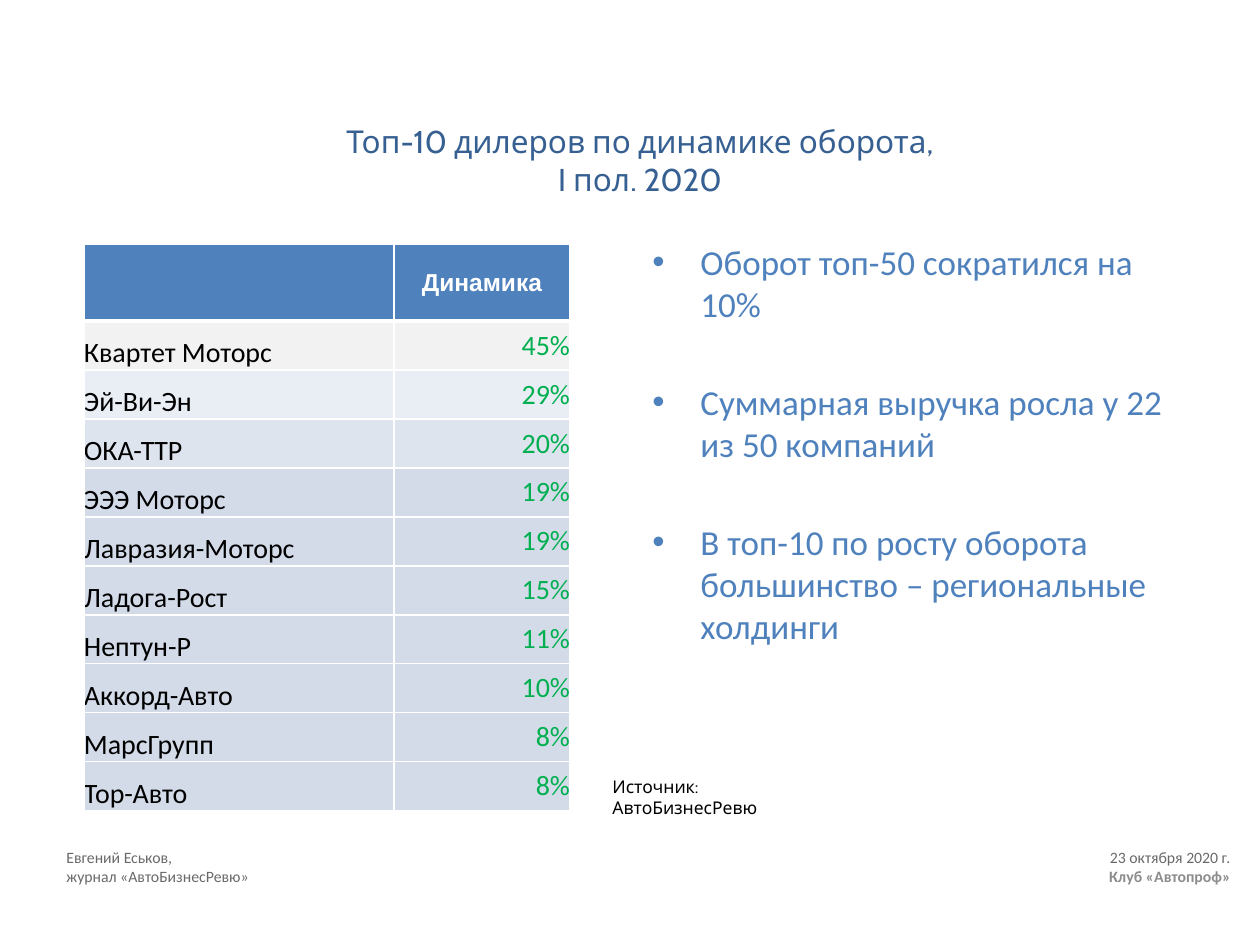
import pptx
import pptx.util
import pptx.dml.color
import pptx.enum.text
from pptx.oxml.ns import qn
from lxml import etree

ALIGN = pptx.enum.text.PP_ALIGN
ANCHOR = pptx.enum.text.MSO_ANCHOR

TITLE = ["Топ-10 дилеров по динамике оборота,", "I пол. 2020"]
HEADER = ["", "Динамика"]
DEALERS = [
    ("Квартет Моторс", "45%"),
    ("Эй-Ви-Эн", "29%"),
    ("ОКА-ТТР", "20%"),
    ("ЭЭЭ Моторс", "19%"),
    ("Лавразия-Моторс", "19%"),
    ("Ладога-Рост", "15%"),
    ("Нептун-Р", "11%"),
    ("Аккорд-Авто", "10%"),
    ("МарсГрупп", "8%"),
    ("Тор-Авто", "8%"),
]
BULLETS = [
    "Оборот топ-50 сократился на 10%",
    "Суммарная выручка росла у 22 из 50 компаний",
    "В топ-10 по росту оборота большинство – региональные холдинги",
]
SOURCE = ["Источник:", "АвтоБизнесРевю"]
FOOTER = [
    ("Евгений Еськов,", "23 октября 2020 г."),
    ("журнал «АвтоБизнесРевю»", "Клуб «Автопроф»"),
]

THEME = {
    "display": "Cabin", "body": "Calibri", "header": "Arial",
    "title": "376092", "accent": "4F81BD", "growth": "00B050",
    "text": "000000", "white": "FFFFFF", "footer": "696969", "club": "8C8C8C",
    "rows": ["F2F2F2", "E9EDF4", "DEE4EE", "D3DBE9"],  # last one repeats
    "title_pt": 18, "bullet_pt": 20, "cell_pt": 16, "header_pt": 14,
    "source_pt": 10, "footer_pt": 9,
}

TITLE_BOX = (94, 116, 1092, 90)
TABLE_AT = (84, 244)
COLUMNS = [310, 176]
HEADER_H, ROW_H = 77, 49
BULLET_BOX = (640, 234, 546, 546)
BULLET_INDENT = 48
SOURCE_BOX = (600, 770, 248, 54)
FOOTER_BOX = (54, 848, 1191, 50)
FOOTER_TAB = 1164


def px(n):
    return pptx.util.Emu(n * 914400 // 126)


def rgb(color):
    return pptx.dml.color.RGBColor.from_string(color)


def add_text(p, text, font="body", size=16, color="text", bold=False, align=None):
    r = p.add_run()
    r.text = text
    r.font.name = THEME[font]
    r.font.size = pptx.util.Pt(size)
    r.font.color.rgb = rgb(THEME[color])
    r.font.bold = bold
    if align is not None:
        p.alignment = align


def paragraphs(tf, count):
    """Yield the first paragraph of the frame, then new ones up to count."""
    yield tf.paragraphs[0]
    for _ in range(count - 1):
        yield tf.add_paragraph()


def add_box(slide, box, wrap=True):
    tf = slide.shapes.add_textbox(*map(px, box)).text_frame
    tf.word_wrap = wrap
    return tf


def add_title(slide):
    sp = slide.shapes.title
    sp.left, sp.top, sp.width, sp.height = map(px, TITLE_BOX)
    tf = sp.text_frame
    tf.auto_size = pptx.enum.text.MSO_AUTO_SIZE.NONE
    tf.vertical_anchor = ANCHOR.TOP
    for p, line in zip(paragraphs(tf, len(TITLE)), TITLE):
        add_text(p, line, font="display", size=THEME["title_pt"], color="title",
                 align=ALIGN.CENTER)


def style_cell(cell, fill, top=1, bottom=1):
    """Draw white borders with widths in points, then fill the cell."""
    tc_pr = cell._tc.get_or_add_tcPr()
    for tag, width in (("lnL", 1), ("lnR", 1), ("lnT", top), ("lnB", bottom)):
        ln = etree.SubElement(tc_pr, qn(f"a:{tag}"), w=str(pptx.util.Pt(width)))
        solid = etree.SubElement(ln, qn("a:solidFill"))
        etree.SubElement(solid, qn("a:srgbClr"), val=THEME["white"])
    cell.fill.solid()
    cell.fill.fore_color.rgb = rgb(fill)


def add_dealer_table(slide):
    height = HEADER_H + ROW_H * len(DEALERS)
    size = (sum(COLUMNS), height)
    table = slide.shapes.add_table(len(DEALERS) + 1, len(COLUMNS),
                                   *map(px, TABLE_AT + size)).table
    for col, width in zip(table.columns, COLUMNS):
        col.width = px(width)
    for i, row in enumerate(table.rows):
        row.height = px(ROW_H if i else HEADER_H)

    for cell, label in zip(table.rows[0].cells, HEADER):
        style_cell(cell, THEME["accent"], bottom=3)
        cell.vertical_anchor = ANCHOR.MIDDLE
        if label:
            add_text(cell.text_frame.paragraphs[0], label, font="header",
                     size=THEME["header_pt"], color="white", bold=True,
                     align=ALIGN.CENTER)

    formats = [
        (ANCHOR.BOTTOM, {"color": "text", "align": ALIGN.LEFT}),
        (ANCHOR.MIDDLE, {"color": "growth", "align": ALIGN.RIGHT}),
    ]
    fills = THEME["rows"]
    for i, values in enumerate(DEALERS):
        for j, (value, (anchor, style)) in enumerate(zip(values, formats)):
            cell = table.cell(i + 1, j)
            style_cell(cell, fills[min(i, len(fills) - 1)], top=1 if i else 3)
            cell.vertical_anchor = anchor
            cell.margin_left = cell.margin_right = 0
            cell.margin_top = cell.margin_bottom = 0
            add_text(cell.text_frame.paragraphs[0], value,
                     size=THEME["cell_pt"], **style)


def add_bullets(slide):
    tf = add_box(slide, BULLET_BOX)
    for i, (p, line) in enumerate(zip(paragraphs(tf, len(BULLETS)), BULLETS)):
        p_pr = p._p.get_or_add_pPr()
        p_pr.set("marL", str(px(BULLET_INDENT)))
        p_pr.set("indent", str(-px(BULLET_INDENT)))
        etree.SubElement(p_pr, qn("a:buFont"), typeface="Arial")
        etree.SubElement(p_pr, qn("a:buChar"), char="•")
        p.space_before = pptx.util.Pt(32 if i else 0)
        add_text(p, line, size=THEME["bullet_pt"], color="accent")


def add_source(slide):
    tf = add_box(slide, SOURCE_BOX, wrap=False)
    for p, line in zip(paragraphs(tf, len(SOURCE)), SOURCE):
        add_text(p, line, font="display", size=THEME["source_pt"], align=ALIGN.LEFT)


def add_footer(slide):
    tf = add_box(slide, FOOTER_BOX)
    tf.margin_top = 0
    right_styles = [{"color": "footer"}, {"color": "club", "bold": True}]
    for p, (left, right), style in zip(paragraphs(tf, len(FOOTER)), FOOTER, right_styles):
        tabs = etree.SubElement(p._p.get_or_add_pPr(), qn("a:tabLst"))
        etree.SubElement(tabs, qn("a:tab"), pos=str(px(FOOTER_TAB)), algn="r")
        add_text(p, left + "\t", size=THEME["footer_pt"], color="footer")
        add_text(p, right, size=THEME["footer_pt"], **style)


def main():
    prs = pptx.Presentation()
    prs.slide_width, prs.slide_height = px(1260), px(945)
    slide = prs.slides.add_slide(prs.slide_layouts[5])
    add_footer(slide)
    add_dealer_table(slide)
    add_title(slide)
    add_source(slide)
    add_bullets(slide)
    prs.save("out.pptx")


if __name__ == "__main__":
    main()
